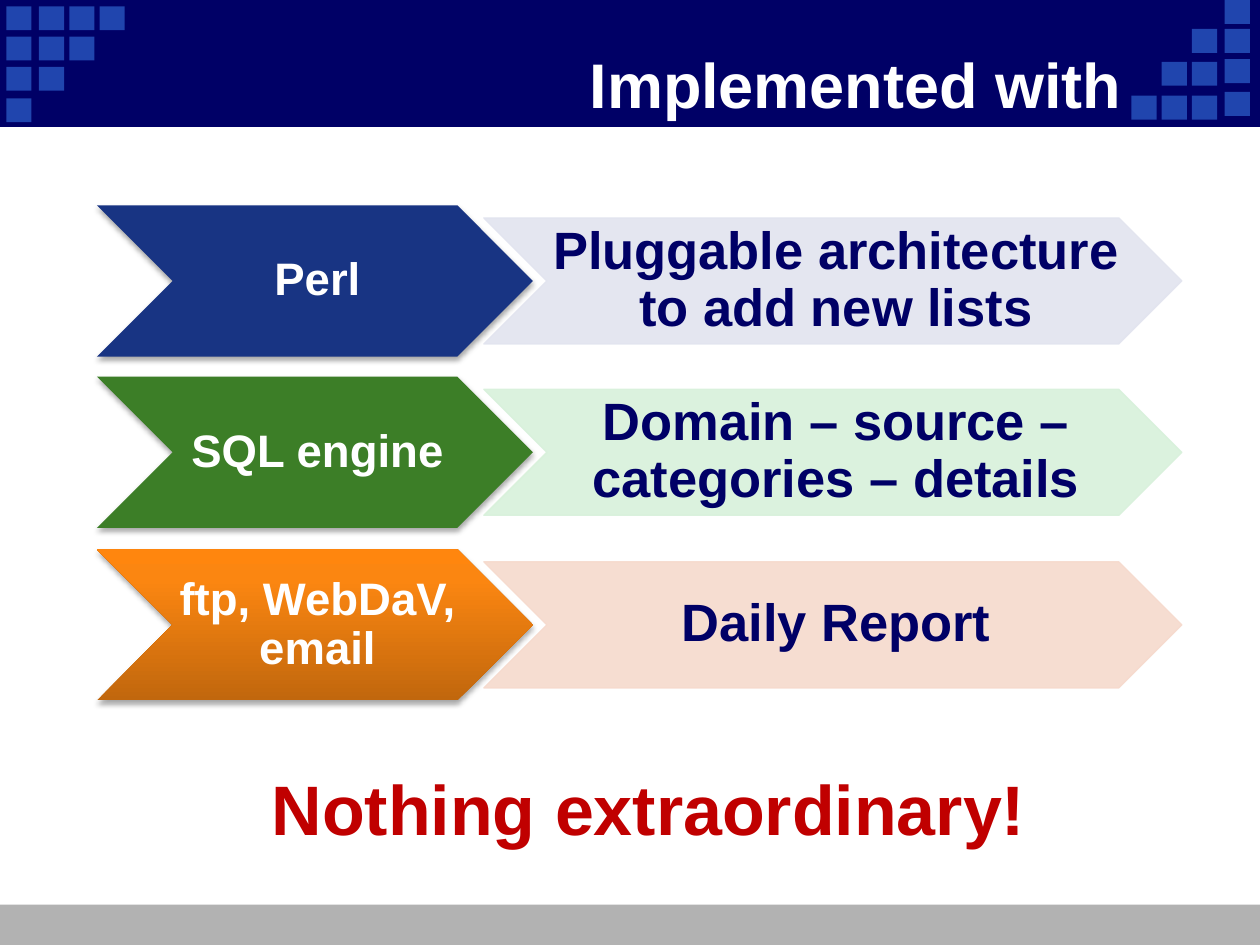
from lxml import etree
from pptx import Presentation
from pptx.dml.color import RGBColor
from pptx.enum.shapes import MSO_SHAPE
from pptx.enum.text import MSO_ANCHOR, PP_ALIGN
from pptx.oxml.ns import qn
from pptx.util import Inches, Pt

RECT, CHEVRON = MSO_SHAPE.RECTANGLE, MSO_SHAPE.CHEVRON
TOP, MIDDLE = MSO_ANCHOR.TOP, MSO_ANCHOR.MIDDLE
CENTER, RIGHT = PP_ALIGN.CENTER, PP_ALIGN.RIGHT

COLORS = {
    "navy": "000066", "square": "2045AE", "footer": "B2B2B2",
    "white": "FFFFFF", "red": "C00000", "shadow": "000000",
    "blue": "183483", "green": "3C7E27", "orange": "FF860E",
    "orange_mid": "FB8611", "orange_dark": "C1670D",
    "pale_blue": "E2E4EF", "pale_green": "D8F1DB", "pale_orange": "F6DACD",
}
ORANGE_STOPS = [(0, "orange_dark"), (80, "orange_mid"), (100, "orange")]
WIDTH, HEIGHT = 10, 7.5
SQUARE = (0.2, 0.19)
LEFT_COLUMNS, LEFT_ROWS = (0.05, 0.31, 0.55, 0.79), (0.05, 0.29, 0.53, 0.78)
RIGHT_COLUMNS = {9.72: (0, 0.23, 0.47, 0.73), 9.46: (0.23, 0.49, 0.76),
                 9.22: (0.49, 0.76), 8.98: (0.76,)}
ROW_TOPS = (1.63, 2.99, 4.36)
LABEL_INSETS = (0.04, 0.02, 0, 0.02)
ROWS = [
    ("Perl", "blue", "Pluggable architecture to add new lists", "pale_blue"),
    ("SQL engine", "green", "Domain – source – categories – details", "pale_green"),
    ("ftp, WebDaV, email", "orange", "Daily Report", "pale_orange"),
]


def rgb(name):
    return RGBColor.from_string(COLORS[name])


def child(parent, tag, **attrs):
    return etree.SubElement(parent, qn(tag), {k: str(v) for k, v in attrs.items()})


def add_alpha(color, percent):
    child(color, "a:alpha", val=percent * 1000)


def add_block(slide, kind, box, color, outlined=False):
    sp = slide.shapes.add_shape(kind, *map(Inches, box))
    sp.shadow.inherit = False
    sp.fill.solid()
    sp.fill.fore_color.rgb = rgb(color)
    if outlined:
        sp.line.color.rgb = rgb(color)
        sp.line.width = Pt(0.75)
    else:
        sp.line.fill.background()
    return sp


def add_text(slide, box, text, size, color, align=CENTER, anchor=MIDDLE,
             insets=(0.1, 0.05, 0.1, 0.05), spacing=None):
    tf = slide.shapes.add_textbox(*map(Inches, box)).text_frame
    tf.word_wrap = True
    tf.vertical_anchor = anchor
    tf.margin_left, tf.margin_top, tf.margin_right, tf.margin_bottom = map(Inches, insets)
    p = tf.paragraphs[0]
    p.text = text
    p.alignment = align
    p.line_spacing = spacing
    p.font.name, p.font.size, p.font.bold = "Arial", Pt(size), True
    p.font.color.rgb = rgb(color)


def drop_shadow(sp):
    effects = sp._element.spPr.find(qn("a:effectLst"))
    shadow = child(effects, "a:outerShdw", blurRad=Pt(3.1), dist=Pt(1.8),
                   dir=5400000, rotWithShape=0)
    add_alpha(child(shadow, "a:srgbClr", val=COLORS["shadow"]), 35)


def shade_upward(sp, stops):
    solid = sp._element.spPr.find(qn("a:solidFill"))
    grad = etree.Element(qn("a:gradFill"), rotWithShape="1")
    stop_list = child(grad, "a:gsLst")
    for percent, color in stops:
        stop = child(stop_list, "a:gs", pos=percent * 1000)
        child(stop, "a:srgbClr", val=COLORS[color])
    child(grad, "a:lin", ang=270 * 60000, scaled=0)
    solid.getparent().replace(solid, grad)


def add_banner(slide):
    add_block(slide, RECT, (0, 7.18, WIDTH, HEIGHT - 7.18), "footer")
    add_block(slide, RECT, (0, 0, WIDTH, 1), "navy", outlined=True)
    left = [(x, y) for i, y in enumerate(LEFT_ROWS) for x in LEFT_COLUMNS[:4 - i]]
    right = [(x, y) for x, tops in RIGHT_COLUMNS.items() for y in tops]
    for corner in left + right:
        add_block(slide, RECT, corner + SQUARE, "square")


def add_row(slide, top, label, color, detail, pale):
    sp = add_block(slide, CHEVRON, (0.77, top, 3.46, 1.2), color)
    drop_shadow(sp)
    if color == "orange":
        shade_upward(sp, ORANGE_STOPS)
    add_text(slide, (1.37, top, 2.26, 1.2), label, 26, "white",
             insets=LABEL_INSETS, spacing=0.9)
    sp = add_block(slide, CHEVRON, (3.84, top + 0.1, 5.54, 1), pale, outlined=True)
    for tint in sp._element.spPr.iter(qn("a:srgbClr")):
        add_alpha(tint, 90)
    add_text(slide, (4.34, top + 0.1, 4.55, 1), detail, 30, "navy",
             insets=LABEL_INSETS, spacing=0.9)


def main():
    prs = Presentation()
    prs.slide_width, prs.slide_height = Inches(WIDTH), Inches(HEIGHT)
    s = prs.slides.add_slide(prs.slide_layouts[6])
    add_banner(s)
    add_text(s, (0.92, 0.35, 8.08, 0.62), "Implemented with", 36, "white", align=RIGHT)
    for top, row in zip(ROW_TOPS, ROWS):
        add_row(s, top, *row)
    add_text(s, (1.13, 6.03, 8.19, 0.77), "Nothing extraordinary! ", 40, "red", anchor=TOP)
    prs.save("out.pptx")


if __name__ == "__main__":
    main()
